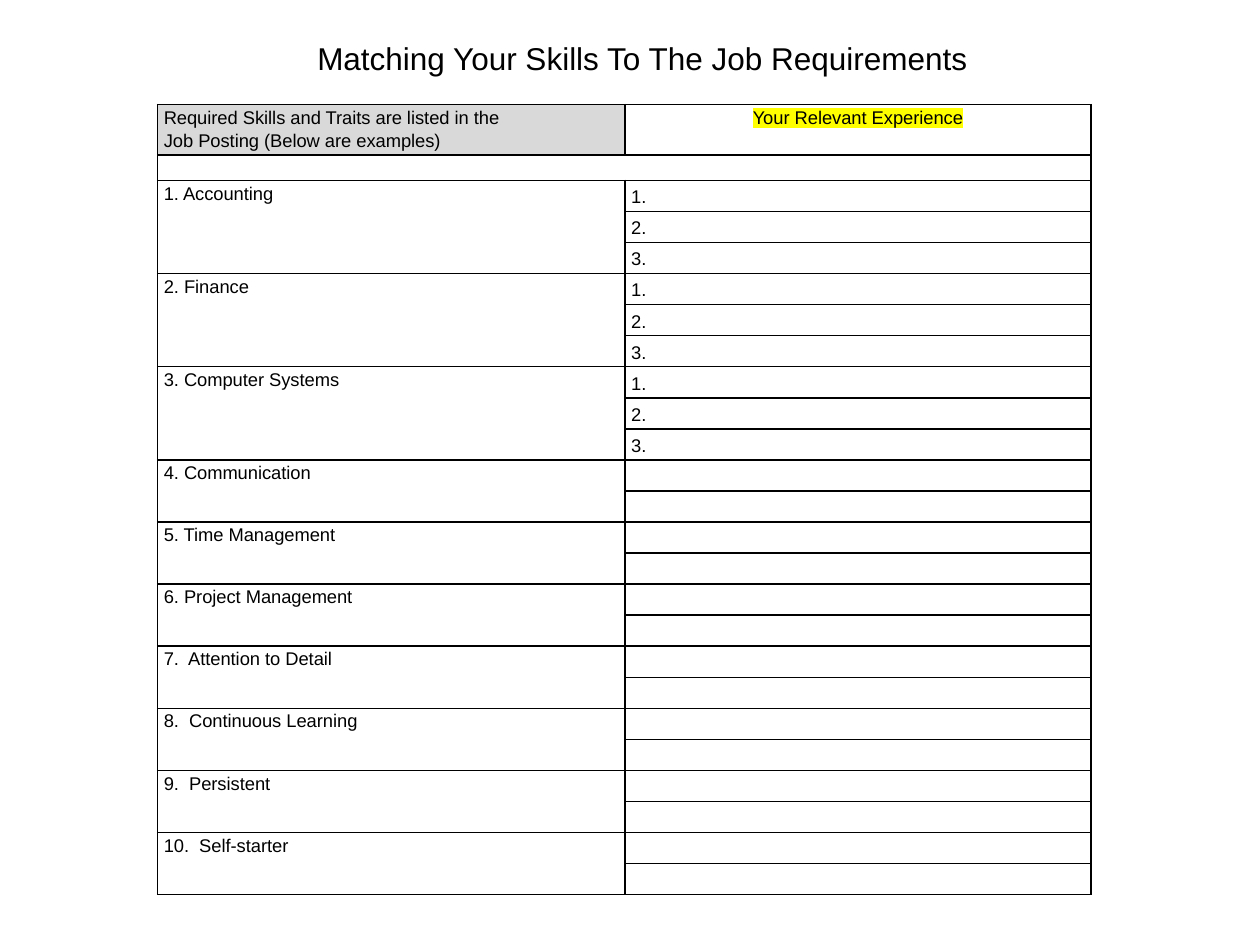
"""Build a one-slide worksheet that matches skills to job requirements."""
from dataclasses import dataclass

from lxml import etree
from pptx import Presentation
from pptx.dml.color import RGBColor
from pptx.enum.text import MSO_ANCHOR, PP_ALIGN
from pptx.oxml.ns import qn
from pptx.util import Inches, Pt

LEFT, CENTER = PP_ALIGN.LEFT, PP_ALIGN.CENTER
TOP, MIDDLE = MSO_ANCHOR.TOP, MSO_ANCHOR.MIDDLE


@dataclass(frozen=True)
class Theme:
    """Colours, font and type sizes."""
    ink: str = "000000"
    header: str = "D9D9D9"
    highlight: str = "FFFF00"
    font: str = "Arial"
    title_size: float = 18
    body_size: float = 10.5
    line_spacing: float = 1.15
    border: float = 1


def apply(target, formats):
    """Set each attribute named in a dict of format values."""
    for attribute, value in formats.items():
        setattr(target, attribute, value)


def add_color(parent, tag, color):
    """Append a colour element such as a fill or a highlight."""
    holder = etree.SubElement(parent, qn(tag))
    etree.SubElement(holder, qn("a:srgbClr"), val=color)
    return holder


class Worksheet:
    """Draw styled elements on the current slide."""

    def __init__(self, slide, theme):
        """Keep the slide and its style."""
        self.slide = slide
        self.theme = theme

    def style_run(self, run, size):
        """Give a run the theme's font."""
        apply(run.font, {"name": self.theme.font, "size": Pt(size)})
        run.font.color.rgb = RGBColor.from_string(self.theme.ink)

    def title(self, text, left, top, width, height):
        """Add the heading."""
        frame = self.slide.shapes.add_textbox(
            Inches(left), Inches(top), Inches(width), Inches(height)).text_frame
        apply(frame, {"word_wrap": True, "vertical_anchor": TOP,
                      "margin_top": Inches(0.07), "text": text})
        self.style_run(frame.paragraphs[0].runs[0], self.theme.title_size)

    def table(self, left, top, column_widths, row_heights):
        """Add a plain bordered table."""
        grid = self.slide.shapes.add_table(
            len(row_heights), len(column_widths), Inches(left), Inches(top),
            Inches(sum(column_widths)), Inches(sum(row_heights))).table
        apply(grid, {"first_row": False, "horz_banding": False})
        for column, width in zip(grid.columns, column_widths):
            column.width = Inches(width)
        for row, height in zip(grid.rows, row_heights):
            row.height = Inches(height)
        for cell in grid.iter_cells():
            self.cell(cell)
        return grid

    def cell(self, cell):
        """Clear a cell's fill and set its margins, borders and empty-text size."""
        apply(cell, {"margin_left": Inches(0.05), "margin_right": Inches(0.05),
                     "margin_top": 0, "margin_bottom": 0})
        cell.fill.background()
        properties = cell._tc.get_or_add_tcPr()
        for position, side in enumerate(("a:lnL", "a:lnR", "a:lnT", "a:lnB")):
            line = etree.Element(qn(side), w=str(Pt(self.theme.border)))
            add_color(line, "a:solidFill", self.theme.ink)
            properties.insert(position, line)
        etree.SubElement(cell.text_frame.paragraphs[0]._p, qn("a:endParaRPr"),
                         sz=str(int(self.theme.body_size * 100)))

    def cell_text(self, cell, text, align=LEFT, anchor=TOP, highlight=None):
        """Write text into a cell."""
        apply(cell, {"text": text, "vertical_anchor": anchor})
        for paragraph in cell.text_frame.paragraphs:
            apply(paragraph, {"alignment": align,
                              "line_spacing": self.theme.line_spacing})
            for run in paragraph.runs:
                self.style_run(run, self.theme.body_size)
                if highlight:
                    properties = run.font._element
                    marker = add_color(properties, "a:highlight", highlight)
                    properties.find(qn("a:latin")).addprevious(marker)


def main():
    """Create the presentation."""
    theme = Theme()
    presentation = Presentation()
    apply(presentation, {"slide_width": Inches(10), "slide_height": Inches(7.5)})
    slide = presentation.slides.add_slide(presentation.slide_layouts[6])
    sheet = Worksheet(slide, theme)
    sheet.title("Matching Your Skills To The Job Requirements", 2.42, 0.24, 6.17, 0.67)

    numbered, blank = ("1.", "2.", "3."), ("", "")
    skills = [
        ("1. Accounting", numbered),
        ("2. Finance", numbered),
        ("3. Computer Systems", numbered),
        ("4. Communication", blank),
        ("5. Time Management", blank),
        ("6. Project Management", blank),
        ("7.  Attention to Detail", blank),
        ("8.  Continuous Learning", blank),
        ("9.  Persistent", blank),
        ("10.  Self-starter", blank),
    ]
    header_heights = [0.4, 0.2]
    answer_count = sum(len(answers) for _, answers in skills)
    answer_height = (6.27 - sum(header_heights)) / answer_count
    grid = sheet.table(1.25, 0.83, [3.71, 3.7],
                       header_heights + [answer_height] * answer_count)

    requirements = grid.cell(0, 0)
    sheet.cell_text(requirements, "Required Skills and Traits are listed in the\n"
                                  "Job Posting (Below are examples)")
    requirements.fill.solid()
    requirements.fill.fore_color.rgb = RGBColor.from_string(theme.header)
    sheet.cell_text(grid.cell(0, 1), "Your Relevant Experience", CENTER,
                    highlight=theme.highlight)
    grid.cell(1, 0).merge(grid.cell(1, 1))

    first_row = len(header_heights)
    for skill, answers in skills:
        next_row = first_row + len(answers)
        grid.cell(first_row, 0).merge(grid.cell(next_row - 1, 0))
        sheet.cell_text(grid.cell(first_row, 0), skill)
        for row, answer in enumerate(answers, first_row):
            if answer:
                sheet.cell_text(grid.cell(row, 1), answer, anchor=MIDDLE)
        first_row = next_row

    presentation.save("out.pptx")


if __name__ == "__main__":
    main()
